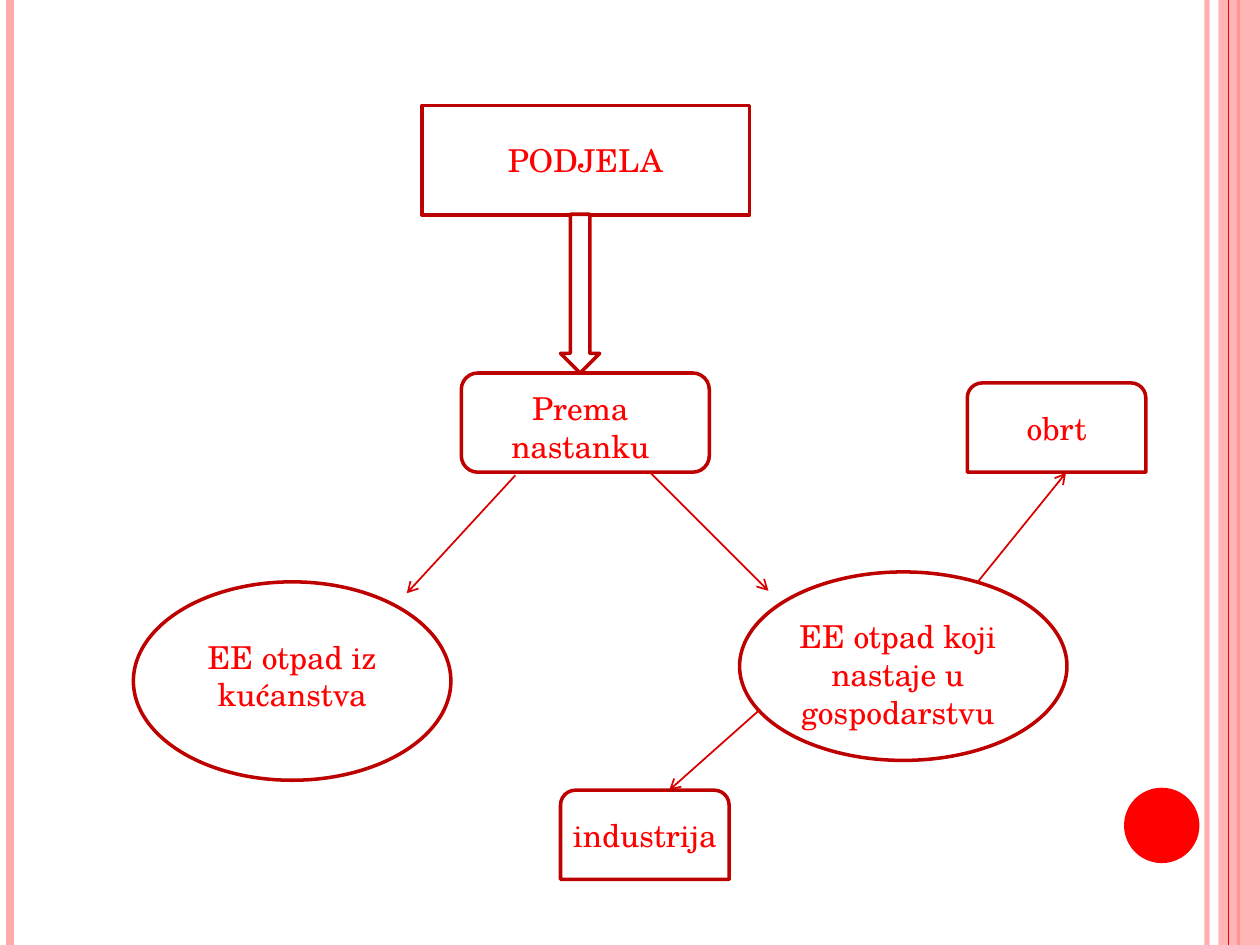
from dataclasses import dataclass

from lxml import etree
from pptx import Presentation
from pptx import util as u
from pptx.dml.color import RGBColor
from pptx.enum import shapes, text
from pptx.oxml.ns import qn

Kind = shapes.MSO_SHAPE
Align = text.PP_ALIGN


@dataclass(frozen=True)
class Theme:
    paper: str = "FFFFFF"
    pink: str = "FFABAB"
    red: str = "FF0000"
    outline: str = "BD0000"
    arrow: str = "DA0000"
    font: str = "TeX Gyre Schola"
    size: float = 18
    outline_width: float = 2
    arrow_width: float = 1


def cm(*lengths):
    return [u.Cm(length) for length in lengths]


def set_alpha(fill_parent, percent):
    color = next(fill_parent.iter(qn("a:srgbClr")))
    etree.SubElement(color, qn("a:alpha")).set("val", str(percent * 1000))


def write(frame, words, *, font, size, color, align=Align.CENTER):
    paragraph = frame.paragraphs[0]
    paragraph.alignment = align
    run = paragraph.add_run()
    run.text = words
    run.font.name = font
    run.font.size = u.Pt(size)
    run.font.color.rgb = RGBColor.from_string(color)


class Canvas:
    def __init__(self, slide, theme):
        self.slide = slide
        self.theme = theme

    def shape(self, kind, box, fill, outline=None, alpha=None):
        item = self.slide.shapes.add_shape(kind, *cm(*box))
        item.shadow.inherit = False
        item.fill.solid()
        item.fill.fore_color.rgb = RGBColor.from_string(fill)
        if alpha:
            set_alpha(item._element.spPr, alpha)
        if outline:
            item.line.color.rgb = RGBColor.from_string(outline)
            item.line.width = u.Pt(self.theme.outline_width)
        else:
            item.line.fill.background()

    def node(self, kind, box):
        self.shape(kind, box, self.theme.paper, self.theme.outline)

    def label(self, words, box, **style):
        frame = self.slide.shapes.add_textbox(*cm(*box)).text_frame
        frame.word_wrap = True
        frame.auto_size = text.MSO_AUTO_SIZE.SHAPE_TO_FIT_TEXT
        write(frame, words, font=self.theme.font, size=self.theme.size,
              color=self.theme.red, **style)

    def line(self, start, end, color, width, alpha=None, arrow=False):
        item = self.slide.shapes.add_connector(
            shapes.MSO_CONNECTOR.STRAIGHT, *cm(*start, *end))
        item.line.color.rgb = RGBColor.from_string(color)
        item.line.width = u.Pt(width)
        properties = item._element.spPr
        if alpha:
            set_alpha(properties, alpha)
        if arrow:
            stroke = properties.find(qn("a:ln"))
            etree.SubElement(stroke, qn("a:tailEnd")).set("type", "arrow")
        etree.SubElement(properties, qn("a:effectLst"))

    def arrow(self, start, end):
        self.line(start, end, self.theme.arrow, self.theme.arrow_width, arrow=True)

    def rail(self, x, color, width, alpha=None):
        self.line((x, 0), (x, 19.05), color, width, alpha)


def main():
    deck = Presentation()
    deck.slide_width, deck.slide_height = cm(25.4, 19.05)
    theme = Theme()
    canvas = Canvas(deck.slides.add_slide(deck.slide_layouts[6]), theme)

    # Side rails and red dot
    canvas.rail(24.33, theme.pink, 3, alpha=93)
    canvas.rail(0.2, theme.pink, 4.5)
    canvas.rail(24.97, theme.red, 1.5)
    canvas.shape(Kind.RECTANGLE, (24.56, 0, 0.84, 19.05), theme.pink, alpha=87)
    canvas.rail(24.77, theme.red, 0.75)
    canvas.shape(Kind.OVAL, (22.66, 15.88, 1.52, 1.52), theme.red)

    # Title and criterion
    canvas.node(Kind.RECTANGLE, (8.51, 2.13, 6.6, 2.21))
    canvas.node(Kind.DOWN_ARROW, (11.3, 4.32, 0.79, 3.2))
    canvas.node(Kind.ROUNDED_RECTANGLE, (9.3, 7.52, 5, 2))
    canvas.label("Prema nastanku", (9.5, 7.72, 4.4, 1.8))
    canvas.label("PODJELA", (9.3, 2.72, 5, 1.02))

    # Two sources of waste
    canvas.arrow((13.11, 9.53), (15.49, 11.91))
    canvas.arrow((10.39, 9.58), (8.2, 11.96))
    canvas.node(Kind.OVAL, (2.69, 11.73, 6.4, 4))
    canvas.node(Kind.OVAL, (14.91, 11.53, 6.6, 3.8))
    canvas.label("EE otpad iz kućanstva", (2.69, 12.73, 6.4, 1.8))
    canvas.label("EE otpad koji nastaje u gospodarstvu", (15.7, 12.32, 4.8, 2.57))

    # Branches of the economy
    canvas.arrow((15.29, 14.33), (13.49, 15.93))
    canvas.arrow((19.71, 11.73), (21.49, 9.53))
    canvas.node(Kind.ROUND_2_SAME_RECTANGLE, (11.3, 15.93, 3.4, 1.8))
    canvas.label("industrija", (11.3, 16.33, 3.8, 1.02), align=Align.LEFT)
    canvas.node(Kind.ROUND_2_SAME_RECTANGLE, (19.5, 7.72, 3.6, 1.8))
    canvas.label("obrt", (19.7, 8.13, 3.2, 1.02))

    deck.save("out.pptx")


if __name__ == "__main__":
    main()
